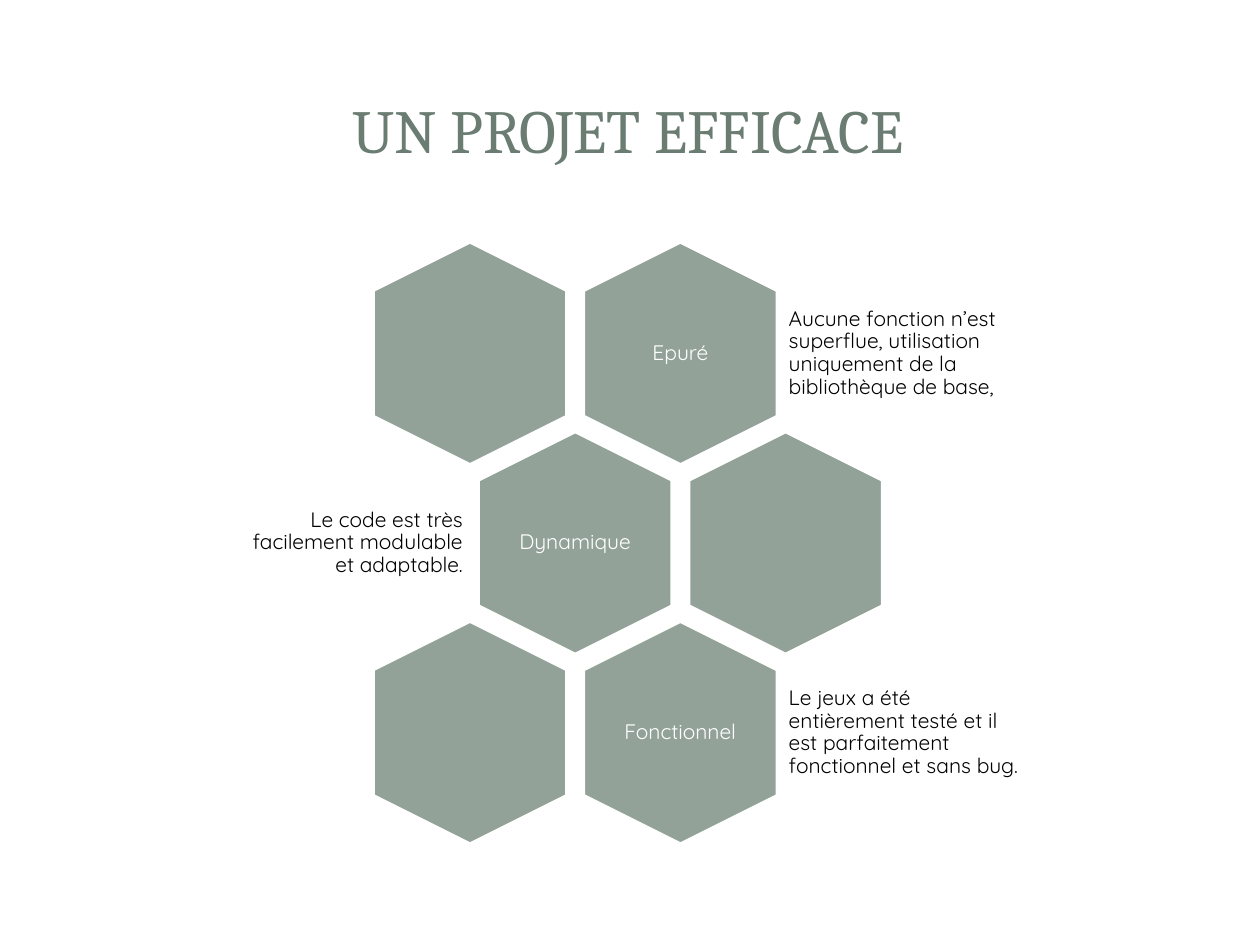
from pptx import Presentation
from pptx.dml.color import RGBColor
from pptx.enum import shapes, text
from pptx.util import Inches, Pt

COLORS = {"white": "FFFFFF", "black": "000000", "sage": "93A299", "title": "6B7D72"}
HEXAGON_LENGTH, HEXAGON_WIDTH = 1.77, 1.54
COLUMN_STEP, ROW_STEP = 1.67, 1.505
ROW_SHIFT = COLUMN_STEP / 2
LABEL_SIZE = (1.06, 1.22)
DESCRIPTION_HEIGHT = 1.06
ROWS = [
    ("Epuré", "Aucune fonction n’est superflue, utilisation uniquement de la bibliothèque de base,"),
    ("Dynamique", "Le code est très facilement modulable et adaptable."),
    ("Fonctionnel", "Le jeux a été entièrement testé et il est parfaitement fonctionnel et sans bug."),
]


def color(name):
    return RGBColor.from_string(COLORS[name])


def write_text(shape, content, size=12, font="Quicksand", fill="black",
               align=text.PP_ALIGN.LEFT, inset=0.05, spacing=0.9):
    frame = shape.text_frame
    frame.word_wrap = True
    frame.auto_size = text.MSO_AUTO_SIZE.NONE
    frame.vertical_anchor = text.MSO_ANCHOR.MIDDLE
    frame.margin_left = frame.margin_right = Inches(inset)
    frame.margin_top = frame.margin_bottom = Inches(0.05)
    paragraph = frame.paragraphs[0]
    paragraph.alignment = align
    paragraph.line_spacing = spacing
    run = paragraph.add_run()
    run.text = content
    run.font.size = Pt(size)
    run.font.name = font
    run.font.color.rgb = color(fill)


def add_title(slide, left, top, width, height):
    title = slide.shapes.title
    title.left, title.top = Inches(left), Inches(top)
    title.width, title.height = Inches(width), Inches(height)
    write_text(title, "UN PROJET EFFICACE", size=35, font="Cambria", fill="title",
               align=text.PP_ALIGN.CENTER, inset=0.1, spacing=1.0)


def add_hexagon(slide, center_x, center_y):
    shape = slide.shapes.add_shape(
        shapes.MSO_SHAPE.HEXAGON,
        Inches(center_x - HEXAGON_LENGTH / 2), Inches(center_y - HEXAGON_WIDTH / 2),
        Inches(HEXAGON_LENGTH), Inches(HEXAGON_WIDTH))
    shape.rotation = 90
    shape.adjustments[0] = 0.25
    shape.shadow.inherit = False
    shape.fill.solid()
    shape.fill.fore_color.rgb = color("sage")
    shape.line.color.rgb = color("white")
    shape.line.width = Pt(2)


def add_text_box(slide, left, center_y, width, height, content, **text_format):
    box = slide.shapes.add_textbox(
        Inches(left), Inches(center_y - height / 2), Inches(width), Inches(height))
    write_text(box, content, **text_format)


def add_honeycomb(slide, left, top, width):
    for row, (label, description) in enumerate(ROWS):
        shifted = row % 2 == 1
        first_x = left + width / 2 - COLUMN_STEP + (ROW_SHIFT if shifted else 0) + 0.4
        center_y = top + HEXAGON_LENGTH / 2 + row * ROW_STEP
        centers = [first_x, first_x + COLUMN_STEP]
        for center_x in centers:
            add_hexagon(slide, center_x, center_y)

        label_x = centers[0] if shifted else centers[1]
        label_width, label_height = LABEL_SIZE
        add_text_box(slide, label_x - label_width / 2, center_y, label_width, label_height,
                     label, fill="white", align=text.PP_ALIGN.CENTER)
        if shifted:
            description_left, description_right = left, label_x - 0.84
        else:
            description_left, description_right = label_x + 0.81, left + width
        add_text_box(slide, description_left, center_y, description_right - description_left,
                     DESCRIPTION_HEIGHT, description,
                     align=text.PP_ALIGN.RIGHT if shifted else text.PP_ALIGN.LEFT)


def main():
    presentation = Presentation()
    presentation.slide_width, presentation.slide_height = Inches(10), Inches(7.5)
    slide = presentation.slides.add_slide(presentation.slide_layouts[5])
    slide.background.fill.solid()
    slide.background.fill.fore_color.rgb = color("white")
    add_title(slide, 0.47, 0.45, 9.03, 1.14)
    add_honeycomb(slide, 1.81, 1.92, 6.38)
    presentation.save("out.pptx")


if __name__ == "__main__":
    main()
